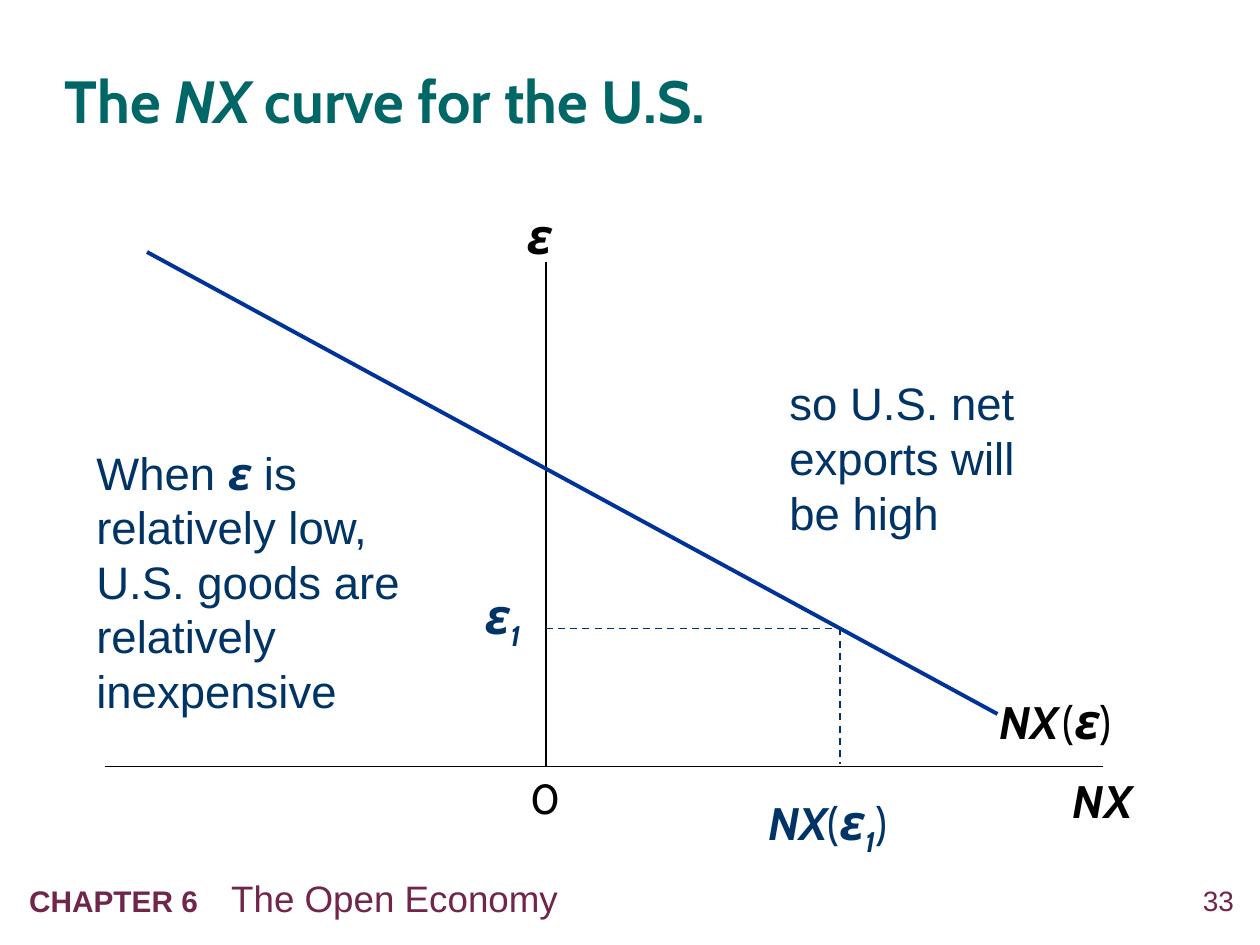
from dataclasses import dataclass

from lxml import etree
from pptx import Presentation
from pptx.dml.color import RGBColor
from pptx.enum import dml, shapes, text
from pptx.oxml import ns
from pptx.util import Pt

BLACK, NAVY, BLUE = "000000", "003366", "003399"
TEAL, PLUM = "006666", "71254B"


@dataclass
class Run:
    """A stretch of text in one format."""
    words: str
    size: float = 26
    font: str = "Cabin"
    bold: bool = False
    italic: bool = False
    subscript: bool = False


@dataclass
class Label:
    """A text box: left, top, width and height in points."""
    box: tuple[float, float, float, float]
    color: str
    runs: list[Run]


@dataclass
class Line:
    """A straight line between two points of the graph."""
    start: tuple[float, float]
    end: tuple[float, float]
    color: str = BLACK
    width: float = 1
    dashed: bool = False


def rgb(color: str) -> RGBColor:
    return RGBColor.from_string(color)


def symbol(words: str, size: float = 26, subscript: bool = False) -> Run:
    """A variable name, set bold and italic."""
    return Run(words, size, bold=True, italic=True, subscript=subscript)


def write_runs(paragraph, runs: list[Run], color: str) -> None:
    paragraph.font.color.rgb = rgb(color)
    for item in runs:
        for number, words in enumerate(item.words.split("\n")):
            if number:
                paragraph.add_line_break()
            run = paragraph.add_run()
            run.text = words
            font = paragraph.font if len(runs) == 1 else run.font
            font.size = Pt(item.size)
            font.name = item.font
            font.bold = item.bold
            font.italic = item.italic
            if item.subscript:
                run.font._element.set("baseline", "-25000")


def add_label(slide, label: Label):
    shape = slide.shapes.add_textbox(*map(Pt, label.box))
    frame = shape.text_frame
    frame.word_wrap = True
    write_runs(frame.paragraphs[0], label.runs, label.color)
    return shape


def add_line(slide, line: Line) -> None:
    connector = slide.shapes.add_connector(
        shapes.MSO_CONNECTOR.STRAIGHT, *map(Pt, line.start + line.end))
    connector.line.color.rgb = rgb(line.color)
    connector.line.width = Pt(line.width)
    if line.dashed:
        connector.line.dash_style = dml.MSO_LINE.DASH
    etree.SubElement(connector._element.spPr, ns.qn("a:effectLst"))


def clear_margins(frame) -> None:
    frame.margin_left = frame.margin_right = 0
    frame.margin_top = frame.margin_bottom = 0


def add_title(slide) -> None:
    title = slide.shapes.title
    title.left, title.top, title.width, title.height = map(Pt, (37, 19, 649, 74))
    frame = title.text_frame
    clear_margins(frame)
    frame.auto_size = text.MSO_AUTO_SIZE.NONE
    frame.vertical_anchor = text.MSO_ANCHOR.MIDDLE
    paragraph = frame.paragraphs[0]
    paragraph.alignment = text.PP_ALIGN.LEFT
    paragraph.line_spacing = 1.05
    write_runs(paragraph, [Run("The ", 34, bold=True), symbol("NX", 34),
                           Run(" curve for the U.S.", 34, bold=True)], TEAL)


def add_footer(slide) -> None:
    chapter = add_label(slide, Label((9.5, 497, 589, 32), PLUM, [
        Run("CHAPTER 6\t", 17, "Arial", bold=True),
        Run("The Open Economy", 21, "Arial")]))
    # A tab stop parts the chapter number from its name
    properties = chapter.text_frame.paragraphs[0]._p.get_or_add_pPr()
    tabs = etree.Element(ns.qn("a:tabLst"))
    etree.SubElement(tabs, ns.qn("a:tab"), pos=str(Pt(115.5)), algn="l")
    properties.insert(0, tabs)

    number = add_label(slide, Label((665, 505, 40, 23), PLUM,
                                    [Run("33", 16, "Arial")]))
    clear_margins(number.text_frame)
    number.text_frame.paragraphs[0].alignment = text.PP_ALIGN.RIGHT


def main() -> None:
    presentation = Presentation()
    presentation.slide_width, presentation.slide_height = Pt(720), Pt(540)
    slide = presentation.slides.add_slide(presentation.slide_layouts[5])
    add_footer(slide)
    add_title(slide)

    # Graph: the marked point lies on the NX curve
    axis_x, axis_y = 312, 438
    curve_start, curve_end = (84, 144), (570, 408)
    slope = (curve_end[1] - curve_start[1]) / (curve_end[0] - curve_start[0])
    point_x = 480
    point_y = curve_start[1] + slope * (point_x - curve_start[0])
    point = (point_x, point_y)
    for line in (
        Line((60, axis_y), (630, axis_y)),
        Line((axis_x, 150), (axis_x, axis_y)),
        Line(curve_start, curve_end, BLUE, 2.25),
        Line((axis_x, point_y), point, NAVY, dashed=True),
        Line(point, (point_x, 436.5), NAVY, dashed=True),
    ):
        add_line(slide, line)

    # Labels of the axes, the curve and the marked point, then the comments
    epsilon = symbol("ε", 28)
    for label in (
        Label((296, axis_y, 36, 36), BLACK, [Run("0", 24)]),
        Label((606, axis_y, 54, 38), BLACK, [symbol("NX")]),
        Label((294, 114, 36, 41), BLACK, [epsilon]),
        Label((564, 391, 90, 41), BLACK, [
            symbol("NX"), Run(" ", 8, "Arial"), Run("("), epsilon, Run(")")]),
        Label((270, 331, 48, 41), NAVY, [epsilon, symbol("1", 28, True)]),
        Label((432, 448.5, 108, 41), NAVY, [
            symbol("NX"), Run("("), epsilon, symbol("1", 28, True), Run(")")]),
        Label((48, 250.5, 210, 163), NAVY, [
            Run("When ", font="Arial"), symbol("ε"),
            Run(" is relatively low, \nU.S. goods are relatively inexpensive",
                font="Arial")]),
        Label((444, 211, 162, 101), NAVY, [
            Run("so U.S. net exports will \nbe high", font="Arial")]),
    ):
        add_label(slide, label)

    presentation.save("out.pptx")


if __name__ == "__main__":
    main()
